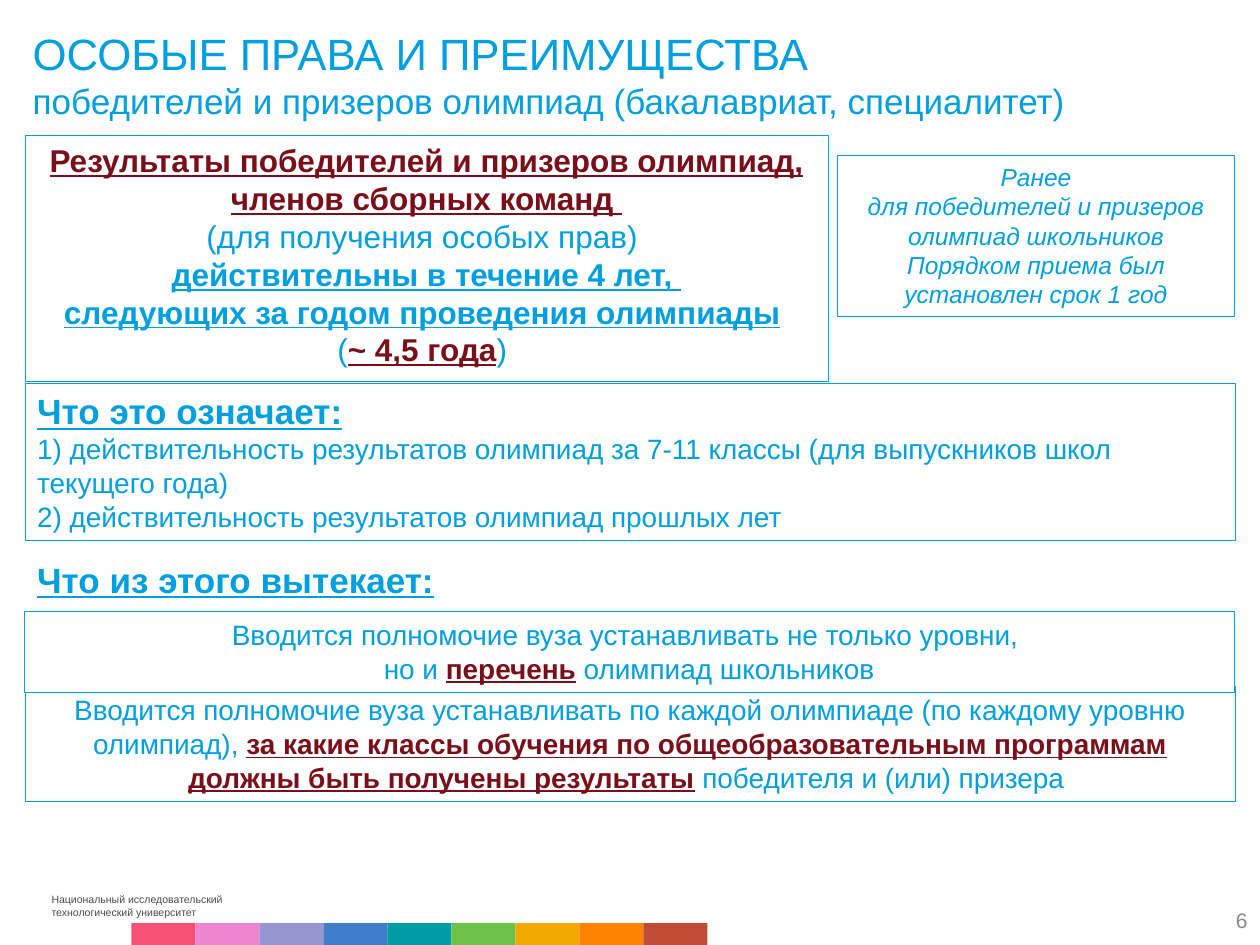
"""Build the slide on the rights of olympiad winners."""
from dataclasses import dataclass
from typing import NamedTuple

from pptx import Presentation
from pptx.dml.color import RGBColor
from pptx.enum.shapes import MSO_SHAPE
from pptx.enum.text import MSO_ANCHOR, PP_ALIGN
from pptx.util import Cm, Pt

RECT = MSO_SHAPE.RECTANGLE
TOP, MIDDLE = MSO_ANCHOR.TOP, MSO_ANCHOR.MIDDLE
LEFT, CENTER, RIGHT = PP_ALIGN.LEFT, PP_ALIGN.CENTER, PP_ALIGN.RIGHT

BLUE = RGBColor(0x00, 0x9F, 0xDF)
WINE = RGBColor(0x7B, 0x0F, 0x19)
GREY = RGBColor(0x89, 0x89, 0x89)
DARK = RGBColor(0x4C, 0x4C, 0x4C)
WHITE = RGBColor(0xFF, 0xFF, 0xFF)
STRIPES = [
    RGBColor(0xF6, 0x52, 0x75), RGBColor(0xEC, 0x86, 0xD0),
    RGBColor(0x95, 0x95, 0xD2), RGBColor(0x40, 0x7E, 0xC9),
    RGBColor(0x00, 0x9C, 0xA6), RGBColor(0x6C, 0xC2, 0x4A),
    RGBColor(0xF2, 0xA9, 0x00), RGBColor(0xFF, 0x82, 0x00),
    RGBColor(0xC0, 0x4C, 0x36),
]


class Span(NamedTuple):
    """A piece of text with its look."""
    text: str
    size: int = 16
    color: RGBColor = BLUE
    strong: bool = False
    slant: bool = False


@dataclass
class Box:
    """A text block with its place in centimetres."""
    left: float
    top: float
    width: float
    height: float
    lines: list[list[Span]]
    align: PP_ALIGN = CENTER
    frame: bool = True
    anchor: MSO_ANCHOR = TOP
    wrap: bool = True
    inset: tuple[float, float] = (0.25, 0.13)


BOXES = [
    Box(0.41, 0.41, 24.41, 1.19, [
        [Span("ОСОБЫЕ ПРАВА И ПРЕИМУЩЕСТВА", 25)],
        [Span("победителей и призеров олимпиад (бакалавриат, специалитет)", 20)],
    ], LEFT, frame=False),
    Box(0.5, 11.13, 21.2, 1.09, [
        [Span("Что из этого вытекает:", 20, strong=True)],
    ], LEFT, frame=False),
    Box(19.48, 18.03, 5.92, 1.02, [[Span("6", 12, GREY)]],
        RIGHT, frame=False, anchor=MIDDLE),
    Box(0.5, 7.73, 24.41, 3.17, [
        [Span("Что это означает:", 20, strong=True)],
        [Span("1) действительность результатов олимпиад за 7-11 классы "
              "(для выпускников школ текущего года)")],
        [Span("2) действительность результатов олимпиад прошлых лет")],
    ], LEFT),
    Box(0.5, 2.72, 16.2, 4.97, [
        [Span("Результаты победителей и призеров олимпиад, "
              "членов сборных команд ", 18, WINE, True)],
        [Span("(для получения особых прав) ", 18)],
        [Span("действительны в течение 4 лет, ", 18, strong=True)],
        [Span("следующих за годом проведения олимпиады", 18, strong=True),
         Span(" ", 18)],
        [Span("(", 18), Span("~ 4,5 года", 18, WINE, True), Span(") ", 18)],
    ]),
    Box(16.88, 3.13, 8.01, 3.25, [
        [Span("Ранее", 14, slant=True)],
        [Span("для победителей и призеров олимпиад школьников "
              "Порядком приема был установлен срок 1 год", 14, slant=True)],
    ]),
    Box(0.5, 13.84, 24.41, 2.31, [
        [Span("Вводится полномочие вуза устанавливать по каждой олимпиаде "
              "(по каждому уровню олимпиад), "),
         Span("за какие классы обучения по общеобразовательным программам "
              "должны быть получены результаты", color=WINE, strong=True),
         Span(" победителя и (или) призера ")],
    ]),
    Box(0.48, 12.32, 24.41, 1.63, [
        [Span("Вводится полномочие вуза устанавливать не только уровни, ")],
        [Span("но и "), Span("перечень", color=WINE, strong=True),
         Span(" олимпиад школьников")],
    ]),
    Box(0.89, 17.91, 3.94, 0.71, [
        [Span("Национальный исследовательский", 6, DARK)],
        [Span("технологический университет", 6, DARK)],
    ], LEFT, frame=False, wrap=False, inset=(0.15, 0.1)),
]


def add_run(para, text: str, *, size: int, color: RGBColor,
            strong: bool, slant: bool) -> None:
    """Append formatted text to a paragraph."""
    run = para.add_run()
    run.text = text
    font = run.font
    font.name = "Arial"
    font.size = Pt(size)
    font.color.rgb = color
    font.bold = font.underline = strong
    font.italic = slant


def add_box(slide, box: Box) -> None:
    """Draw a text block, framed or plain."""
    area = Cm(box.left), Cm(box.top), Cm(box.width), Cm(box.height)
    if box.frame:
        shape = slide.shapes.add_shape(RECT, *area)
        shape.shadow.inherit = False
        shape.fill.solid()
        shape.fill.fore_color.rgb = WHITE
        shape.line.color.rgb = BLUE
        shape.line.width = Pt(0.25)
    else:
        shape = slide.shapes.add_textbox(*area)
    body = shape.text_frame
    body.word_wrap = box.wrap
    body.vertical_anchor = box.anchor
    side, edge = box.inset
    body.margin_left = body.margin_right = Cm(side)
    body.margin_top = body.margin_bottom = Cm(edge)
    for spot, line in enumerate(box.lines):
        para = body.add_paragraph() if spot else body.paragraphs[0]
        para.alignment = box.align
        for span in line:
            add_run(para, span.text, size=span.size, color=span.color,
                    strong=span.strong, slant=span.slant)


def add_stripe(slide, spot: int, color: RGBColor) -> None:
    """Draw one block of the colour band."""
    step = 1.29
    shape = slide.shapes.add_shape(
        RECT, Cm(2.65 + spot * step), Cm(18.61), Cm(step), Cm(0.45))
    shape.shadow.inherit = False
    shape.fill.solid()
    shape.fill.fore_color.rgb = color
    shape.line.fill.background()


def main() -> None:
    """Assemble and save the slide."""
    deck = Presentation()
    deck.slide_width, deck.slide_height = Cm(25.4), Cm(19.05)
    slide = deck.slides.add_slide(deck.slide_layouts[6])
    for spot, color in enumerate(STRIPES):
        add_stripe(slide, spot, color)
    for box in BOXES:
        add_box(slide, box)
    deck.save("out.pptx")


if __name__ == "__main__":
    main()
